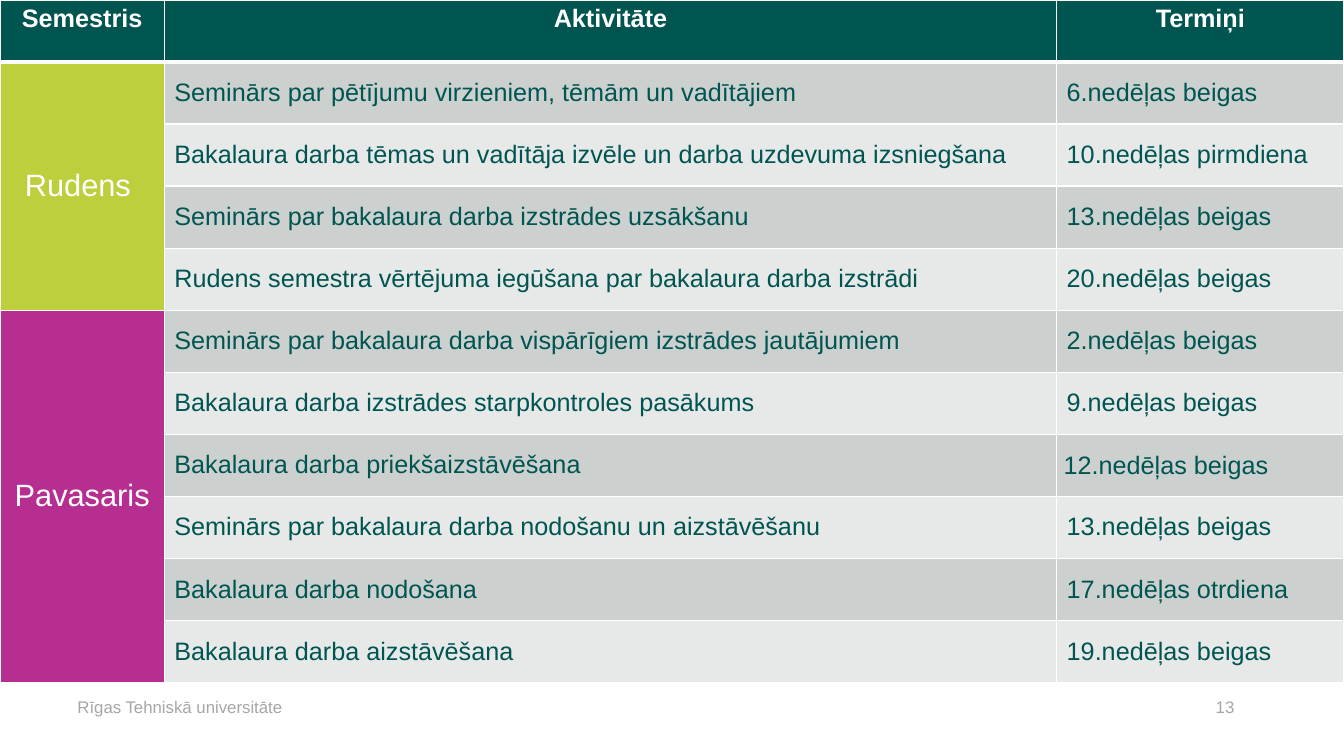
from dataclasses import dataclass

from lxml import etree
from pptx import Presentation
from pptx import util as u
from pptx.dml.color import RGBColor
from pptx.enum import text
from pptx.oxml.ns import qn


@dataclass(frozen=True)
class Theme:
    face: str = "Arial"
    dark: str = "005551"
    white: str = "FFFFFF"
    gray: str = "A6A6A6"
    lime: str = "BDCF3C"
    plum: str = "B72E91"
    bands: tuple = ("CCD1D0", "E7E9E9")
    body: int = 18
    term: int = 22
    foot: int = 12


HEADS = ["Semestris", "Aktivitāte", "Termiņi"]
COLS = [1.63, 8.85, 2.85]
ROW = 6.77 / 11
TERMS = [
    ("Rudens ", Theme.lime, [
        ("Seminārs par pētījumu virzieniem, tēmām un vadītājiem", "6.nedēļas beigas"),
        ("Bakalaura darba tēmas un vadītāja izvēle un darba uzdevuma izsniegšana",
         "10.nedēļas pirmdiena"),
        ("Seminārs par bakalaura darba izstrādes uzsākšanu", "13.nedēļas beigas"),
        ("Rudens semestra vērtējuma iegūšana par bakalaura darba izstrādi",
         "20.nedēļas beigas"),
    ]),
    ("Pavasaris", Theme.plum, [
        ("Seminārs par bakalaura darba vispārīgiem izstrādes jautājumiem",
         "2.nedēļas beigas"),
        ("Bakalaura darba izstrādes starpkontroles pasākums", "9.nedēļas beigas"),
        ("Bakalaura darba priekšaizstāvēšana", "12.nedēļas beigas"),
        ("Seminārs par bakalaura darba nodošanu un aizstāvēšanu", "13.nedēļas beigas"),
        ("Bakalaura darba nodošana", "17.nedēļas otrdiena"),
        ("Bakalaura darba aizstāvēšana", "19.nedēļas beigas"),
    ]),
]


class Deck:
    def __init__(self, theme):
        self.theme = theme
        self.prs = Presentation()
        self.prs.slide_width = u.Inches(13.33)
        self.prs.slide_height = u.Inches(7.5)
        self.slide = self.prs.slides.add_slide(self.prs.slide_layouts[6])

    def say(self, frame, words, size, color, bold=False, align=text.PP_ALIGN.LEFT):
        para = frame.paragraphs[0]
        para.alignment = align
        run = para.add_run()
        run.text = words
        style = {"name": self.theme.face, "size": u.Pt(size), "bold": bold}
        for key, value in style.items():
            setattr(run.font, key, value)
        run.font.color.rgb = RGBColor.from_string(color)

    def label(self, left, width, words):
        box = self.slide.shapes.add_textbox(
            u.Inches(left), u.Inches(6.86), u.Inches(width), u.Inches(0.4))
        box.text_frame.word_wrap = True
        self.say(box.text_frame, words, self.theme.foot, self.theme.gray)

    def grid(self, count, cols, height):
        frame = self.slide.shapes.add_table(
            count, len(cols), 0, 0, u.Inches(sum(cols)), u.Inches(height * count))
        table = frame.table
        for col, width in zip(table.columns, cols):
            col.width = u.Inches(width)
        for row in table.rows:
            row.height = u.Inches(height)
        return table

    def edge(self, cell, **widths):
        """Draw white cell borders; widths in points override 1 pt by side."""
        props = cell._tc.get_or_add_tcPr()
        for side in "LRTB":
            line = etree.SubElement(
                props, qn(f"a:ln{side}"), w=str(u.Pt(widths.get(side, 1))))
            fill = etree.SubElement(line, qn("a:solidFill"))
            etree.SubElement(fill, qn("a:srgbClr"), val=self.theme.white)

    def paint(self, cell, color):
        cell.fill.solid()
        cell.fill.fore_color.rgb = RGBColor.from_string(color)

    def plan(self, heads, terms):
        look, mid = self.theme, text.PP_ALIGN.CENTER
        count = 1 + sum(len(tasks) for _, _, tasks in terms)
        table = self.grid(count, COLS, ROW)
        for row in range(count):
            sides = {0: {"B": 3}, 1: {"T": 3}}.get(row, {})
            for col in range(len(heads)):
                self.edge(table.cell(row, col), **sides)
        for col, head in enumerate(heads):
            cell = table.cell(0, col)
            self.paint(cell, look.dark)
            self.say(cell.text_frame, head, look.body, look.white, True, mid)

        row = 1
        for name, color, tasks in terms:
            first = table.cell(row, 0)
            first.merge(table.cell(row + len(tasks) - 1, 0))
            first.vertical_anchor = text.MSO_ANCHOR.MIDDLE
            self.say(first.text_frame, name, look.term, look.white, align=mid)
            for task in tasks:
                self.paint(table.cell(row, 0), color)
                for col, words in enumerate(task, 1):
                    cell = table.cell(row, col)
                    cell.vertical_anchor = text.MSO_ANCHOR.MIDDLE
                    self.paint(cell, look.bands[(row - 1) % 2])
                    self.say(cell.text_frame, words, look.body, look.dark)
                row += 1
        return table

    def inset(self, cell, side, lead):
        pads = {"margin_left": side, "margin_right": side,
                "margin_top": 0, "margin_bottom": 0}
        for key, value in pads.items():
            setattr(cell, key, u.Inches(value))
        cell.text_frame.paragraphs[0].line_spacing = lead


def main():
    deck = Deck(Theme())
    deck.label(11.96, 0.7, "13")
    deck.label(0.67, 3.6, "Rīgas Tehniskā universitāte")
    table = deck.plan(HEADS, TERMS)
    deck.inset(table.cell(7, 2), 0.07, 1.07)
    deck.prs.save("out.pptx")


if __name__ == "__main__":
    main()
